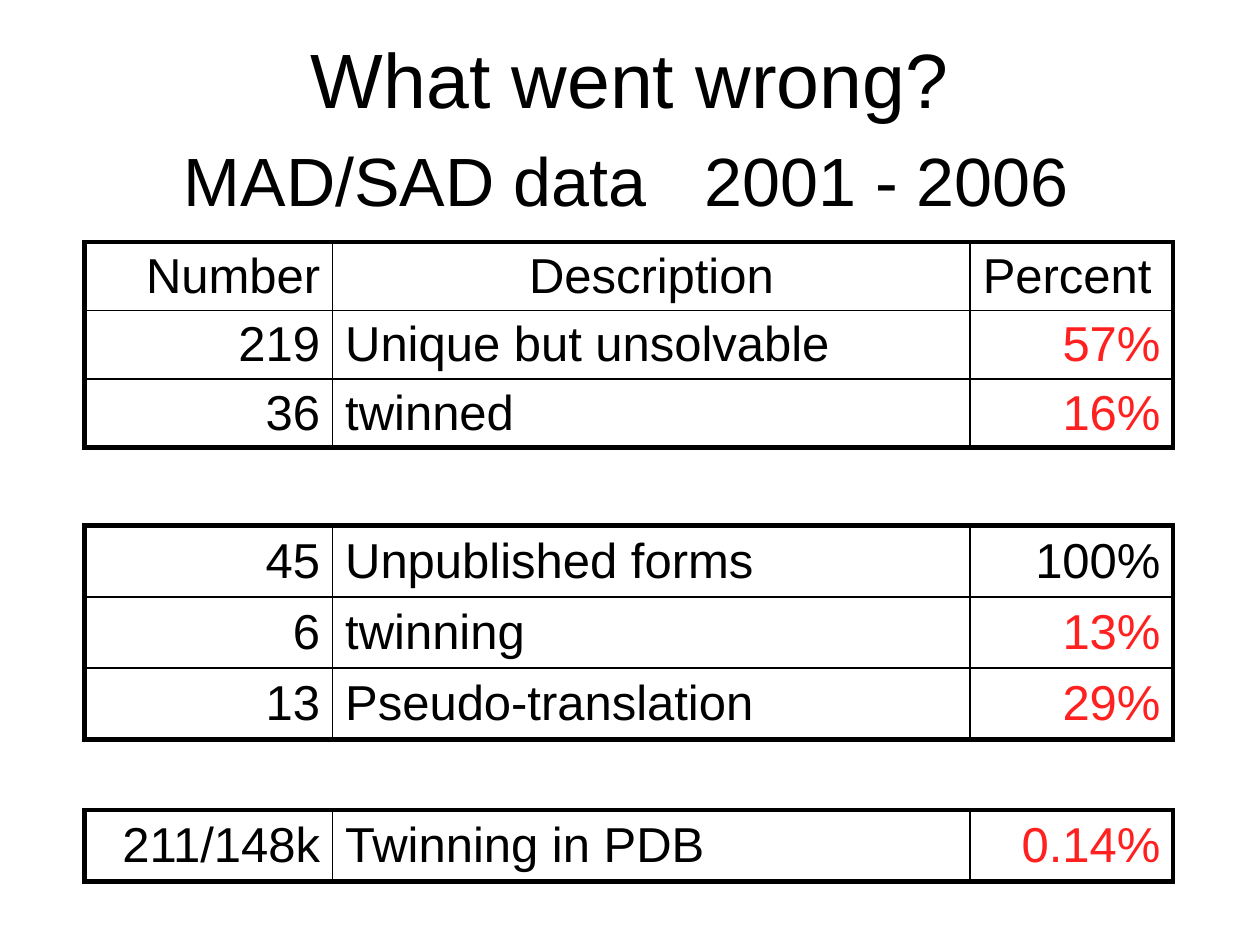
from dataclasses import dataclass

from lxml.etree import SubElement
from pptx import Presentation
from pptx.dml.color import RGBColor
from pptx.enum.text import MSO_ANCHOR, PP_ALIGN
from pptx.oxml.ns import qn
from pptx.util import Pt

BLACK = "000000"
RED = "FF2020"
LEFT, MID, RIGHT = PP_ALIGN.LEFT, PP_ALIGN.CENTER, PP_ALIGN.RIGHT
EDGE = 48.24
COLS = (141.84, 364.32, 115.92)
SIDES = ("a:lnL", "a:lnR", "a:lnT", "a:lnB")


@dataclass
class Row:
    """One table row with its colour and alignments."""
    number: str
    label: str
    share: str
    color: str = RED
    aligns: tuple = (RIGHT, LEFT, RIGHT)


@dataclass
class Grid:
    """One table with its top and row height in points."""
    top: float
    height: float
    rows: list


GRIDS = [
    Grid(138.24, 38.3, [
        Row("Number", "Description", "Percent", BLACK, (RIGHT, MID, LEFT)),
        Row("219", "Unique but unsolvable", "57%"),
        Row("36", "twinned", "16%"),
    ]),
    Grid(300.24, 40.8, [
        Row("45", "Unpublished forms", "100%", BLACK),
        Row("6", "twinning", "13%"),
        Row("13", "Pseudo-translation", "29%"),
    ]),
    Grid(462.96, 40.8, [Row("211/148k", "Twinning in PDB", "0.14%")]),
]


def paint(code: str) -> RGBColor:
    """Turn a hex string into a colour."""
    return RGBColor.from_string(code)


def write(frame, text: str, *, size=28, color=BLACK, align=LEFT, tab=None) -> None:
    """Put formatted text in a frame, with an optional tab stop in points."""
    para = frame.paragraphs[0]
    para.text = text
    para.alignment = align
    if tab:
        stops = SubElement(para._p.get_or_add_pPr(), qn("a:tabLst"))
        SubElement(stops, qn("a:tab"), pos=str(Pt(tab)), algn="l")
    for run in para.runs:
        run.font.name = "Arial"
        run.font.size = Pt(size)
        run.font.color.rgb = paint(color)


def add_text(slide, text: str, box: tuple, **style) -> None:
    """Add a text box with one line of text."""
    frame = slide.shapes.add_textbox(*map(Pt, box)).text_frame
    frame.word_wrap = True
    frame.vertical_anchor = MSO_ANCHOR.MIDDLE
    write(frame, text, **style)


def add_lines(cell, outer: tuple) -> None:
    """Draw cell borders, thick on the outer sides."""
    props = cell._tc.get_or_add_tcPr()
    for side, thick in zip(SIDES, outer):
        line = SubElement(props, qn(side), w=str(Pt(3 if thick else 1)))
        fill = SubElement(line, qn("a:solidFill"))
        SubElement(fill, qn("a:srgbClr"), val=BLACK)


def add_grid(slide, grid: Grid) -> None:
    """Add one bordered table."""
    count = len(grid.rows)
    table = slide.shapes.add_table(
        count, len(COLS), Pt(EDGE), Pt(grid.top),
        Pt(sum(COLS)), Pt(grid.height * count)).table
    table.first_row = table.horz_banding = False
    for col, width in zip(table.columns, COLS):
        col.width = Pt(width)
    for r, row in enumerate(grid.rows):
        table.rows[r].height = Pt(grid.height)
        texts = (row.number, row.label, row.share)
        colors = (BLACK, BLACK, row.color)
        for c, (text, color, align) in enumerate(zip(texts, colors, row.aligns)):
            cell = table.cell(r, c)
            cell.vertical_anchor = MSO_ANCHOR.MIDDLE
            cell.margin_top = cell.margin_bottom = Pt(2.8)
            add_lines(cell, (c == 0, c == len(COLS) - 1, r == 0, r == count - 1))
            cell.fill.background()
            write(cell.text_frame, text, color=color, align=align)


def main() -> None:
    """Build and save the slide."""
    deck = Presentation()
    deck.slide_width, deck.slide_height = Pt(720), Pt(540)
    slide = deck.slides.add_slide(deck.slide_layouts[6])
    add_text(slide, "What went wrong?", (54, 5.04, 612, 78.48), size=44, align=MID)
    add_text(slide, "MAD/SAD data\t2001 - 2006", (97.92, 74.88, 525.6, 54.72),
             size=39, tab=297.5)
    for grid in GRIDS:
        add_grid(slide, grid)
    deck.save("out.pptx")


if __name__ == "__main__":
    main()
